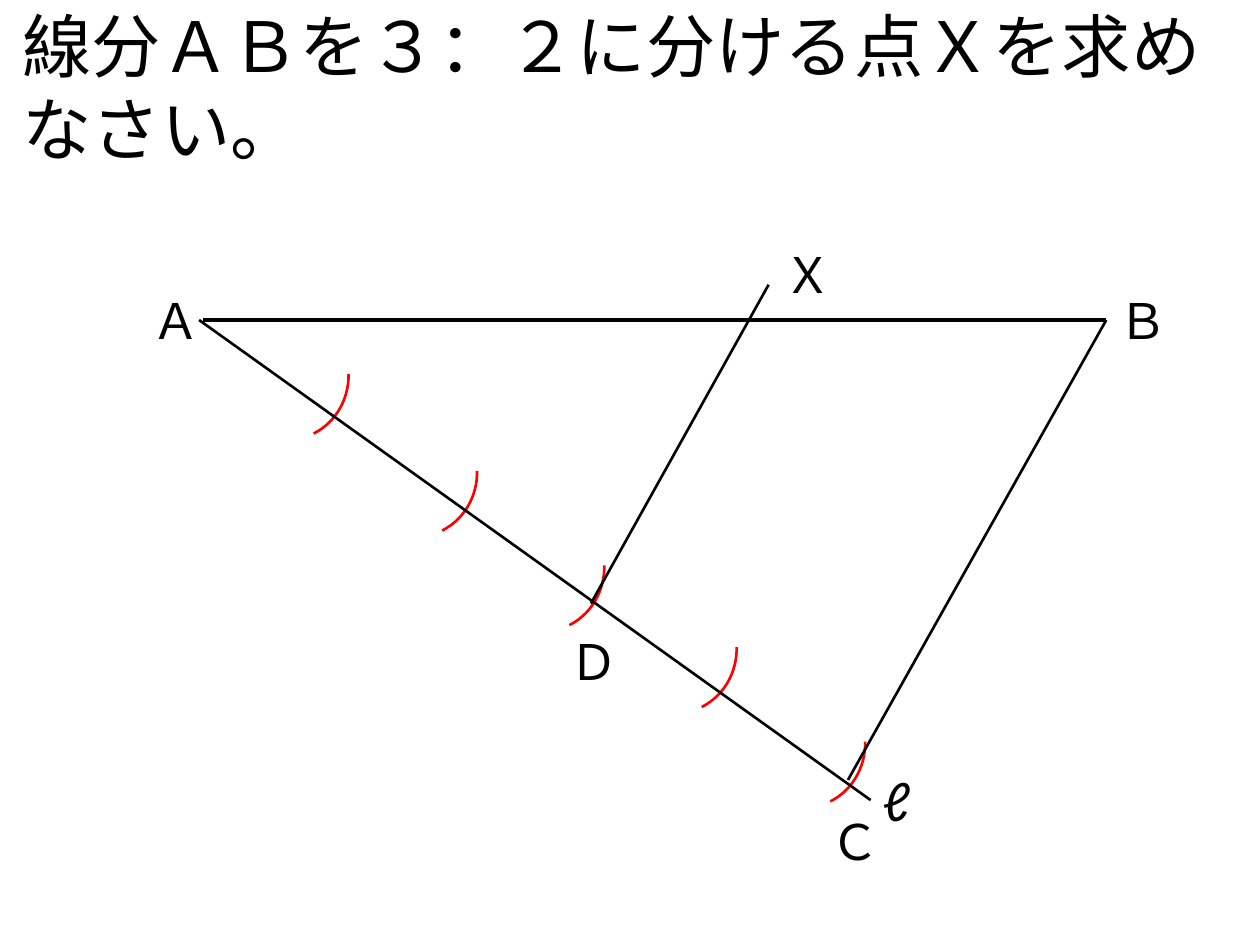
import pptx
import pptx.dml.color
import pptx.enum.shapes
import pptx.enum.text
import pptx.util
import lxml.etree

prs = pptx.Presentation()
prs.slide_width = pptx.util.Inches(10)
prs.slide_height = pptx.util.Inches(7.5)
s = prs.slides.add_slide(prs.slide_layouts[6])
col = prs.slide_width / 100
row = prs.slide_height / 75


def rgb(value):
    return pptx.dml.color.RGBColor.from_string(value)


def add_text(text, x, y, w, h, size=28, color="000000", wrap=False,
             fit=pptx.enum.text.MSO_AUTO_SIZE.SHAPE_TO_FIT_TEXT,
             anchor=pptx.enum.text.MSO_ANCHOR.TOP):
    sp = s.shapes.add_textbox(int(x * col), int(y * row), int(w * col), int(h * row))
    tf = sp.text_frame
    tf.word_wrap = wrap
    tf.auto_size = fit
    tf.vertical_anchor = anchor
    r = tf.paragraphs[0].add_run()
    r.text = text
    r.font.name = "Calibri"
    r.font.size = pptx.util.Pt(size)
    r.font.color.rgb = rgb(color)


add_text("線分ＡＢを３：２に分ける点Ｘを求めなさい。", 0.8, 2.2, 96.9, 9.3, size=39.6,
         wrap=True, fit=pptx.enum.text.MSO_AUTO_SIZE.NONE,
         anchor=pptx.enum.text.MSO_ANCHOR.MIDDLE)

for x, y in [(17.3, 24.6), (27.5, 32.3), (37.6, 39.8), (48.1, 46.3), (58.3, 53.8)]:
    sp = s.shapes.add_shape(pptx.enum.shapes.MSO_SHAPE.ARC, int(x * col), int(y * row),
                            int(10.6 * col), int(10.1 * row))
    sp.adjustments[0] = 170.6
    sp.adjustments[1] = 209.06
    sp.rotation = 75.9
    sp.shadow.inherit = False
    sp.fill.background()
    sp.line.color.rgb = rgb("FF0000")
    sp.line.width = pptx.util.Pt(1.5)

for x1, y1, x2, y2, weight in [
    (16.1, 25.4, 87.8, 25.4, 2.25),
    (15.8, 25.4, 69.1, 63.5, 1.5),
    (87.8, 25.4, 67.3, 61.9, 1.5),
    (61, 22.6, 46.9, 47.9, 1.5),
]:
    sp = s.shapes.add_connector(pptx.enum.shapes.MSO_CONNECTOR.STRAIGHT, int(x1 * col),
                                int(y1 * row), int(x2 * col), int(y2 * row))
    sp.line.color.rgb = rgb("000000")
    sp.line.width = pptx.util.Pt(weight)
    lxml.etree.SubElement(sp.element.spPr, pptx.oxml.ns.qn("a:effectLst"))

for name, x, y, w in [("Ａ", 11, 22.6, 4.8), ("Ｂ", 87.8, 22.6, 5.1), ("Ｘ", 61.2, 18.9, 4.6),
                      ("Ｄ", 44.2, 49.6, 5), ("Ｃ", 64.9, 63.9, 4.9)]:
    add_text(name, x, y, w, 5.7)
add_text("ℓ", 69.1, 60.3, 4.3, 6.4, size=32)

prs.save("out.pptx")
